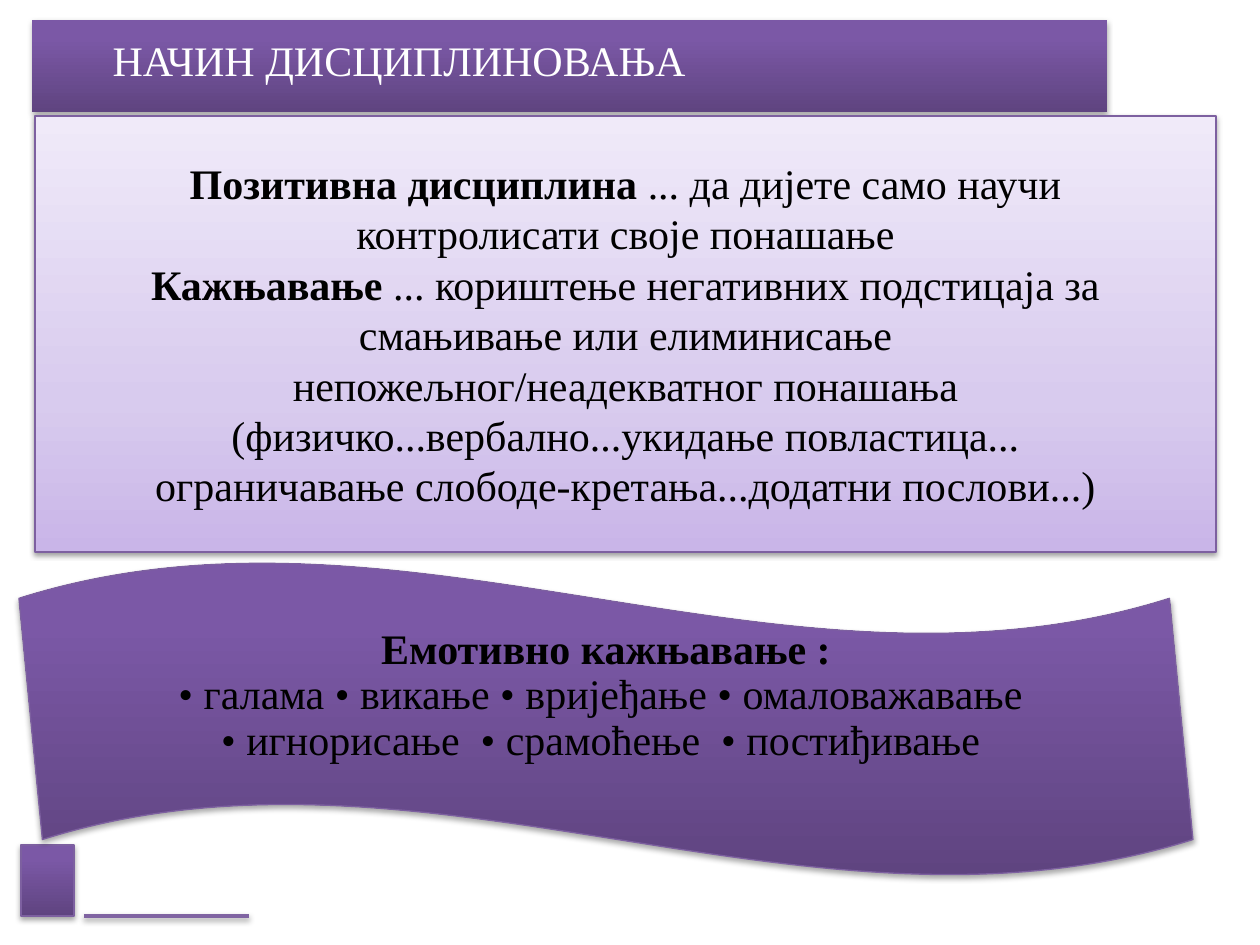
"""Builds the slide on positive discipline and punishment."""
from lxml.etree import SubElement
from pptx import Presentation
from pptx.dml.color import RGBColor
from pptx.enum.shapes import MSO_CONNECTOR, MSO_SHAPE
from pptx.enum.text import MSO_ANCHOR, MSO_AUTO_SIZE, PP_ALIGN
from pptx.oxml.ns import qn
from pptx.util import Emu, Pt

PX = 914400 / 126
WHITE = RGBColor(0xFF, 0xFF, 0xFF)
BLACK = RGBColor(0, 0, 0)
OUTLINE = RGBColor(0x7D, 0x60, 0xA0)
RULE = RGBColor(0x80, 0x64, 0xA2)
DARK_STOPS = [(0, RGBColor(0x5F, 0x44, 0x80)), (80, RGBColor(0x7B, 0x58, 0xA6)),
              (100, RGBColor(0x7C, 0x57, 0xA8))]
LIGHT_STOPS = [(0, RGBColor(0xC9, 0xB5, 0xE8)), (35, RGBColor(0xD8, 0xCB, 0xEE)),
               (100, RGBColor(0xF0, 0xEA, 0xF9))]


def px(*lengths):
    return [Emu(round(length * PX)) for length in lengths]


def add_shadow(properties, opacity, distance):
    effects = properties.find(qn("a:effectLst"))
    if effects is None:
        effects = SubElement(properties, qn("a:effectLst"))
    outer = SubElement(effects, qn("a:outerShdw"), blurRad="40000", dist=str(distance),
                       dir="5400000", rotWithShape="0")
    color = SubElement(outer, qn("a:srgbClr"), val=str(BLACK))
    SubElement(color, qn("a:alpha"), val=str(opacity * 1000))


prs = Presentation()
prs.slide_width, prs.slide_height = px(1260, 945)
slide = prs.slides.add_slide(prs.slide_layouts[5])

rule = slide.shapes.add_connector(MSO_CONNECTOR.STRAIGHT, *px(84, 916, 249, 916))
rule.line.color.rgb = RULE
rule.line.width = Pt(2)
add_shadow(rule._element.spPr, 38, 20000)

panels = []
for preset, box, stops, outlined, opacity, distance in [
    (MSO_SHAPE.RECTANGLE, (21, 845, 53, 71), DARK_STOPS, True, 35, 23000),
    (MSO_SHAPE.RECTANGLE, (32, 20, 1075, 92), DARK_STOPS, False, 35, 23000),
    (MSO_SHAPE.HEXAGON, (35, 116, 1181, 436), LIGHT_STOPS, True, 38, 20000),
    (MSO_SHAPE.WAVE, (19, 562, 1174, 314), DARK_STOPS, True, 35, 23000),
]:
    panel = slide.shapes.add_shape(preset, *px(*box))
    panel.fill.gradient()
    panel.fill.gradient_angle = 90
    stop_list = panel._element.spPr.find(qn("a:gradFill")).find(qn("a:gsLst"))
    stop_list.clear()
    for position, color in stops:
        stop = SubElement(stop_list, qn("a:gs"), pos=str(position * 1000))
        SubElement(stop, qn("a:srgbClr"), val=str(color))
    if outlined:
        panel.line.color.rgb = OUTLINE
        panel.line.width = Pt(0.75)
    else:
        panel.line.fill.background()
    panel.shadow.inherit = False
    add_shadow(panel._element.spPr, opacity, distance)
    panels.append(panel)

corner, banner, definitions, emotive = panels
definitions.adjustments[0] = 0
emotive.adjustments[0] = 0.116
emotive.adjustments[1] = 0.01

heading = slide.shapes.title
banner._element.addnext(heading._element)
heading.left, heading.top, heading.width, heading.height = px(100, 28, 670, 63)

for part, align, anchor, spacing, color, paragraphs in [
    (heading, PP_ALIGN.LEFT, MSO_ANCHOR.TOP, 1.0, WHITE, [[("НАЧИН ДИСЦИПЛИНОВАЊА", False)]]),
    (definitions, PP_ALIGN.CENTER, MSO_ANCHOR.MIDDLE, 1.0, BLACK, [
        [("Позитивна дисциплина ", True),
         ("... да дијете само научи контролисати своје понашање", False)],
        [("Кажњавање", True),
         (" ... кориштење негативних подстицаја за смањивање или елиминисање "
          "непожељног/неадекватног понашања "
          "(физичко...вербално...укидање повластица...", False)],
        [("ограничавање слободе-кретања...додатни послови...)", False)],
    ]),
    (emotive, PP_ALIGN.CENTER, MSO_ANCHOR.MIDDLE, 0.9, BLACK, [
        [("Емотивно кажњавање :", True), ("\n", False),
         ("• галама • викање • вријеђање • омаловажавање ", False), ("\n", False),
         ("• игнорисање  • срамоћење  • постиђивање ", False)],
    ]),
]:
    frame = part.text_frame
    frame.word_wrap = True
    frame.vertical_anchor = anchor
    for index, runs in enumerate(paragraphs):
        paragraph = frame.add_paragraph() if index else frame.paragraphs[0]
        paragraph.alignment = align
        paragraph.line_spacing = spacing
        for text, bold in runs:
            if text == "\n":
                paragraph.add_line_break()
                continue
            run = paragraph.add_run()
            run.text = text
            run.font.color.rgb = color
            style = {"name": "Times New Roman", "size": Pt(24), "bold": bold}
            for attribute, value in style.items():
                setattr(run.font, attribute, value)

heading.text_frame.auto_size = MSO_AUTO_SIZE.SHAPE_TO_FIT_TEXT
emotive.text_frame.margin_bottom = px(52)[0]

prs.save("out.pptx")
